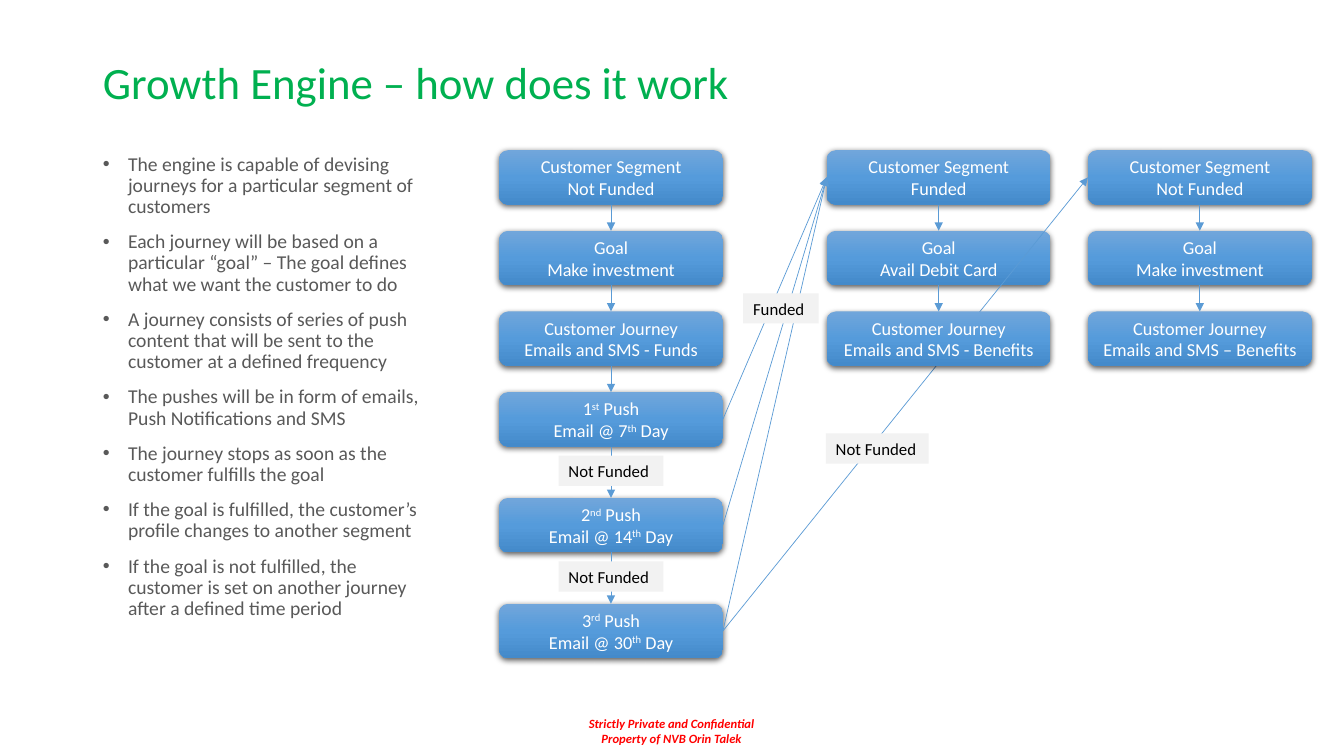
from copy import deepcopy
from itertools import pairwise

from pptx import Presentation
from pptx.dml.color import RGBColor
from pptx.enum.shapes import MSO_CONNECTOR as Connector, MSO_SHAPE as Preset
from pptx.enum.text import MSO_ANCHOR as Anchor, MSO_AUTO_SIZE as AutoSize, PP_ALIGN as Align
from pptx.oxml.ns import qn
from pptx.oxml.xmlchemy import OxmlElement
from pptx.util import Inches, Pt

GREEN, GRAY, RED = "00B050", "595959", "FF0000"
BLUE, WHITE, BLACK, PALE = "5B9BD5", "FFFFFF", "000000", "F2F2F2"
BOX_GRADIENT = [(0, "71A6DB"), (50, "559BDB"), (100, "448ACA")]
TOP, LEFT, BOTTOM, RIGHT = range(4)
BOX_WIDTH, BOX_HEIGHT = 2.22, 0.54
FIRST_TOP, ROW_STEP, PUSH_STEP = 1.49, 0.8, 1.05

BULLETS = [
    "The engine is capable of devising journeys for a particular segment of customers",
    "Each journey will be based on a particular “goal” – The goal defines what we want the customer to do",
    "A journey consists of series of push content that will be sent to the customer at a defined frequency",
    "The pushes will be in form of emails, Push Notifications and SMS",
    "The journey stops as soon as the customer fulfills the goal",
    "If the goal is fulfilled, the customer’s profile changes to another segment",
    "If the goal is not fulfilled, the customer is set on another journey after a defined time period",
]
UNFUNDED = [
    ("Customer Segment", "Not Funded"),
    ("Goal", "Make investment"),
    ("Customer Journey", "Emails and SMS - Funds"),
]
PUSHES = [
    ("1^st^ Push", "Email @ 7^th^ Day"),
    ("2^nd^ Push", "Email @ 14^th^ Day"),
    ("3^rd^ Push", "Email @ 30^th^ Day"),
]
FUNDED = [("Customer Segment", "Funded"), ("Goal", "Avail Debit Card")]
FUNDED_JOURNEY = ("Customer Journey", "Emails and SMS - Benefits")
STILL_UNFUNDED = [
    ("Customer Segment", "Not Funded"),
    ("Goal", "Make investment"),
    ("Customer Journey", "Emails and SMS – Benefits"),
]


def rgb(value):
    return RGBColor.from_string(value)


def add_xml(parent, tag, **attributes):
    """Append a new XML element with the given attributes."""
    element = OxmlElement(tag)
    for name, value in attributes.items():
        element.set(name, str(value))
    parent.append(element)
    return element


def row_top(row):
    return FIRST_TOP + row * ROW_STEP


class FlowSlide:
    font = "Calibri"

    def __init__(self, presentation):
        self.slide = presentation.slides.add_slide(presentation.slide_layouts[1])
        self.shapes = self.slide.shapes

    def place(self, shape, left, top, width, height):
        shape.left, shape.top = Inches(left), Inches(top)
        shape.width, shape.height = Inches(width), Inches(height)

    def add_lines(self, frame, lines, size, color, align=Align.LEFT, bold=False, italic=False):
        """Fill a text frame with one paragraph per line; ^marks^ enclose superscripts."""
        for index, line in enumerate(lines):
            paragraph = frame.add_paragraph() if index else frame.paragraphs[0]
            paragraph.alignment = align
            for part, text in enumerate(line.split("^")):
                if not text:
                    continue
                run = paragraph.add_run()
                run.text = text
                run.font.name, run.font.size = self.font, Pt(size)
                run.font.color.rgb = rgb(color)
                run.font.bold, run.font.italic = bold, italic
                if part % 2:
                    run.font._element.set("baseline", "30000")

    def title(self, text):
        shape = self.shapes.title
        self.place(shape, 0.92, 0.4, 11.5, 0.89)
        shape.text_frame.vertical_anchor = Anchor.MIDDLE
        shape.text_frame.auto_size = AutoSize.NONE
        self.add_lines(shape.text_frame, [text], 32, GREEN)
        shape.text_frame.paragraphs[0].line_spacing = 0.9

    def bullets(self, lines):
        shape = self.slide.placeholders[1]
        self.place(shape, 0.92, 1.48, 3.36, 5.27)
        shape.text_frame.auto_size = AutoSize.NONE
        self.add_lines(shape.text_frame, lines, 14, GRAY)
        for index, paragraph in enumerate(shape.text_frame.paragraphs):
            properties = paragraph._p.get_or_add_pPr()
            properties.set("marL", str(Inches(0.25)))
            properties.set("indent", str(Inches(-0.25)))
            add_xml(properties, "a:buFont", typeface="Arial")
            add_xml(properties, "a:buChar", char="•")
            paragraph.line_spacing = 0.9
            paragraph.space_before = Pt(10 if index else 0)

    def box(self, lines, left, top):
        shape = self.shapes.add_shape(
            Preset.ROUNDED_RECTANGLE, Inches(left), Inches(top), Inches(BOX_WIDTH), Inches(BOX_HEIGHT))
        shape.line.fill.background()
        shape.fill.gradient()
        shape.fill.gradient_angle = 270
        stop_list = shape._element.spPr.find(".//" + qn("a:gsLst"))
        stop_list.insert(1, deepcopy(stop_list[0]))
        for element, stop, (position, color) in zip(stop_list, shape.fill.gradient_stops, BOX_GRADIENT):
            element.set("pos", str(position * 1000))
            stop.color.rgb = rgb(color)
        shape.shadow.inherit = False
        shadow = add_xml(
            shape._element.spPr.find(qn("a:effectLst")), "a:outerShdw",
            blurRad=Pt(4.5), dist=Pt(1.5), dir=90 * 60000, algn="ctr", rotWithShape=0)
        add_xml(add_xml(shadow, "a:srgbClr", val=BLACK), "a:alpha", val=63000)
        shape.text_frame.word_wrap = True
        shape.text_frame.vertical_anchor = Anchor.MIDDLE
        self.add_lines(shape.text_frame, lines, 13, WHITE, Align.CENTER)
        return shape

    def arrow(self, start, end, start_side=BOTTOM, end_side=TOP):
        connector = self.shapes.add_connector(Connector.STRAIGHT, 0, 0, 0, 0)
        connector.begin_connect(start, start_side)
        connector.end_connect(end, end_side)
        connector.line.color.rgb = rgb(BLUE)
        connector.line.width = Pt(0.5)
        properties = connector._element.spPr
        add_xml(properties.find(qn("a:ln")), "a:tailEnd", type="triangle")
        add_xml(properties, "a:effectLst")

    def column(self, texts, left, tops):
        """Stack boxes and join each one to the next."""
        boxes = [self.box(lines, left, top) for lines, top in zip(texts, tops)]
        for upper, lower in pairwise(boxes):
            self.arrow(upper, lower)
        return boxes

    def text_box(self, lines, left, top, width, height, size, color, wrap=True, **style):
        shape = self.shapes.add_textbox(Inches(left), Inches(top), Inches(width), Inches(height))
        shape.text_frame.word_wrap = wrap
        shape.text_frame.auto_size = AutoSize.SHAPE_TO_FIT_TEXT
        self.add_lines(shape.text_frame, lines, size, color, **style)
        return shape

    def label(self, text, left, top, width):
        shape = self.text_box([text], left, top, width, 0.3, 12, BLACK)
        shape.fill.solid()
        shape.fill.fore_color.rgb = rgb(PALE)


def main():
    presentation = Presentation()
    presentation.slide_width, presentation.slide_height = Inches(13.33), Inches(7.5)
    flow = FlowSlide(presentation)
    flow.text_box(
        ["Strictly Private and Confidential", "Property of NVB Orin Talek"],
        5.73, 7.05, 1.86, 0.4, 9, RED, wrap=False, align=Align.CENTER, bold=True, italic=True)
    flow.title("Growth Engine – how does it work")
    flow.bullets(BULLETS)

    row_tops = [row_top(row) for row in range(3)]
    push_tops = [row_top(3) + index * PUSH_STEP for index in range(3)]
    pushes = flow.column(UNFUNDED + PUSHES, 4.95, row_tops + push_tops)[3:]
    funded_segment, funded_goal = flow.column(FUNDED, 8.2, row_tops)
    unfunded_segment = flow.column(STILL_UNFUNDED, 10.79, row_tops)[0]

    for push in pushes:
        flow.arrow(push, funded_segment, RIGHT, LEFT)
    flow.arrow(pushes[-1], unfunded_segment, RIGHT, LEFT)

    for top in push_tops[:2]:
        flow.label("Not Funded", 5.54, top + 0.63, 1.04)
    flow.label("Funded", 7.37, 2.91, 0.75)
    flow.label("Not Funded", 8.19, 4.3, 1.02)

    funded_journey = flow.box(FUNDED_JOURNEY, 8.2, row_tops[2])
    flow.arrow(funded_goal, funded_journey)
    presentation.save("out.pptx")


if __name__ == "__main__":
    main()
